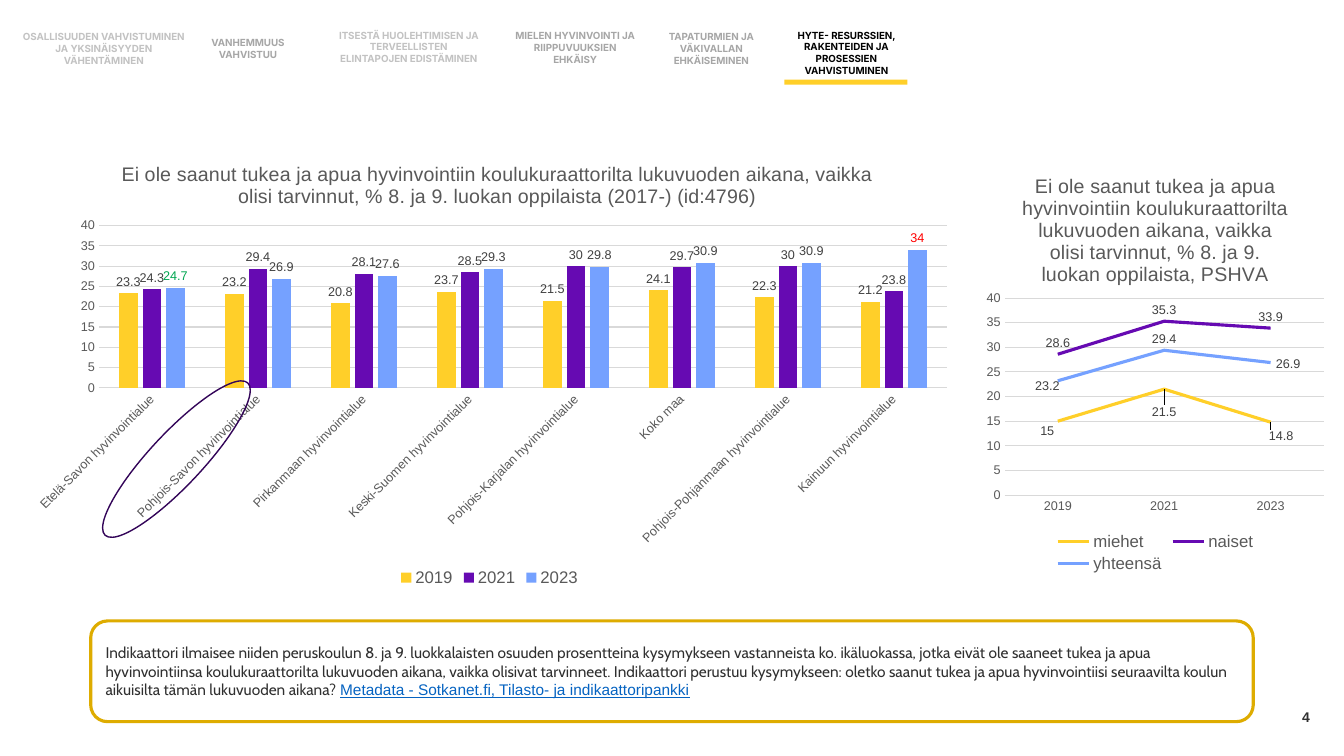
"""Build the slide on school social worker support: two charts, a section bar and an indicator note."""
import dataclasses

import pptx
import pptx.chart.data
import pptx.dml.color
import pptx.enum.chart
import pptx.enum.shapes
import pptx.enum.text
import pptx.oxml
import pptx.oxml.ns
import pptx.util


@dataclasses.dataclass(frozen=True)
class Theme:
    yellow: str = "FFCF29"
    purple: str = "660AB2"
    blue: str = "75A1FF"
    gold: str = "DEAC00"
    outline: str = "330559"
    black: str = "000000"
    pale: str = "C2C2C2"
    muted: str = "A6A6A6"
    ink: str = "303030"
    number: str = "313131"
    link: str = "0563C1"
    axis: str = "595959"
    grid: str = "D9D9D9"
    label: str = "404040"
    best: str = "00A651"
    worst: str = "FF0000"
    font: str = "Arial"
    tab_font: str = "Inter"
    note_font: str = "Cabin"
    tab_size: int = 7
    label_size: int = 9
    number_size: int = 10
    note_size: int = 11
    legend_size: int = 12
    title_size: int = 14


T = Theme()
WIDTH, HEIGHT = 13.33, 7.5
SERIES_COLORS = [T.yellow, T.purple, T.blue]
SHAPES = pptx.enum.shapes.MSO_SHAPE
ALIGN = pptx.enum.text.PP_ALIGN
KINDS = pptx.enum.chart.XL_CHART_TYPE
LABELS = pptx.enum.chart.XL_LABEL_POSITION

# Boxes are left, top, width, height in percent of the slide.
TABS = [
    (["OSALLISUUDEN VAHVISTUMINEN JA YKSINÄISYYDEN VÄHENTÄMINEN"], T.pale, (1.65, 4.8, 12.15, 3.2)),
    (["VANHEMMUUS VAHVISTUU"], T.muted, (13.88, 5.6, 9.15, 1.6)),
    (["ITSESTÄ HUOLEHTIMISEN JA TERVEELLISTEN ELINTAPOJEN EDISTÄMINEN"], T.pale, (25.13, 3.87, 10.58, 4.67)),
    (["MIELEN HYVINVOINTI JA RIIPPUVUUKSIEN EHKÄISY"], T.muted, (38.03, 4.67, 9.53, 3.2)),
    (["TAPATURMIEN JA VÄKIVALLAN EHKÄISEMINEN"], T.muted, (48.16, 4.8, 9.53, 3.2)),
    (["HYTE- RESURSSIEN, RAKENTEIDEN JA PROSESSIEN", "VAHVISTUMINEN"], T.black, (57.69, 4.67, 10.58, 4.67)),
]
TAB_MARK = (58.36, 10.53, 9.15, 0.67)
PAGE_NUMBER = ("4", (74.94, 92.13, 22.51, 5.33))
NOTE_BOX = (6.75, 82.13, 86.5, 13.33)
NOTE = (
    "Indikaattori ilmaisee niiden peruskoulun 8. ja 9. luokkalaisten osuuden prosentteina kysymykseen "
    "vastanneista ko. ikäluokassa, jotka eivät ole saaneet tukea ja apua hyvinvointiinsa koulukuraattorilta "
    "lukuvuoden aikana, vaikka olisivat tarvinneet. Indikaattori perustuu kysymykseen: oletko saanut tukea ja "
    "apua hyvinvointiisi seuraavilta koulun aikuisilta tämän lukuvuoden aikana? "
)
NOTE_LINK = "Metadata - Sotkanet.fi, Tilasto- ja indikaattoripankki"
HIGHLIGHT = (11.18, 46.93, 3.9, 27.6)

TITLE_START = (
    "Ei ole saanut tukea ja apua hyvinvointiin koulukuraattorilta lukuvuoden aikana, "
    "vaikka olisi tarvinnut, % 8. ja 9. luokan oppilaista"
)
REGIONS = {
    "kind": KINDS.COLUMN_CLUSTERED,
    "box": (0.98, 18.53, 70.89, 59.6),
    "title": TITLE_START + " (2017-) (id:4796)",
    "title_at": (0.11, 0.04),
    "plot": (0.09, 0.19, 0.89, 0.36),
    "categories": [
        "Etelä-Savon hyvinvointialue", "Pohjois-Savon hyvinvointialue", "Pirkanmaan hyvinvointialue",
        "Keski-Suomen hyvinvointialue", "Pohjois-Karjalan hyvinvointialue", "Koko maa",
        "Pohjois-Pohjanmaan hyvinvointialue", "Kainuun hyvinvointialue",
    ],
    "series": {
        "2019": [23.3, 23.2, 20.8, 23.7, 21.5, 24.1, 22.3, 21.2],
        "2021": [24.3, 29.4, 28.1, 28.5, 30, 29.7, 30, 23.8],
        "2023": [24.7, 26.9, 27.6, 29.3, 29.8, 30.9, 30.9, 34],
    },
    "label_position": LABELS.OUTSIDE_END,
    "point_labels": {("2023", 0): (T.best, None), ("2023", 7): (T.worst, None)},
}
GENDERS = {
    "kind": KINDS.LINE,
    "box": (72.92, 19.6, 26.11, 56.67),
    "title": TITLE_START + ", PSHVA",
    "title_at": (0.11, 0.05),
    "plot": (0.07, 0.35, 0.91, 0.46),
    "categories": ["2019", "2021", "2023"],
    "series": {"miehet": [15, 21.5, 14.8], "naiset": [28.6, 35.3, 33.9], "yhteensä": [23.2, 29.4, 26.9]},
    "label_position": LABELS.ABOVE,
    "point_labels": {
        ("miehet", 0): (T.label, (-0.03, 0.05)),
        ("miehet", 1): (T.label, (0, 0.08)),
        ("miehet", 2): (T.label, (0.03, 0.06)),
        ("yhteensä", 0): (T.label, (-0.03, 0.04)),
        ("yhteensä", 2): (T.label, (0.05, 0.03)),
    },
}


def place(box):
    sides = (WIDTH, HEIGHT, WIDTH, HEIGHT)
    return [pptx.util.Inches(share * side / 100) for share, side in zip(box, sides)]


def rgb(color):
    return pptx.dml.color.RGBColor.from_string(color)


def style(font, size, color, name=T.font, bold=False):
    font.size, font.name, font.bold = pptx.util.Pt(size), name, bold
    font.color.rgb = rgb(color)


def add_run(p, text, *look, **options):
    r = p.add_run()
    r.text = text
    style(r.font, *look, **options)
    return r


def add_text(s, lines, box, align, *look):
    tf = s.shapes.add_textbox(*place(box)).text_frame
    tf.word_wrap = True
    tf.vertical_anchor = pptx.enum.text.MSO_ANCHOR.MIDDLE
    tf.margin_left = tf.margin_right = tf.margin_top = tf.margin_bottom = 0
    for i, line in enumerate(lines):
        p = tf.add_paragraph() if i else tf.paragraphs[0]
        p.alignment = align
        add_run(p, line, *look, bold=True)


def add_shape(s, kind, box, fill=None, line=None, width=1):
    sp = s.shapes.add_shape(kind, *place(box))
    sp.shadow.inherit = False
    if fill:
        sp.fill.solid()
        sp.fill.fore_color.rgb = rgb(fill)
    else:
        sp.fill.background()
    if line:
        sp.line.color.rgb = rgb(line)
        sp.line.width = pptx.util.Pt(width)
    else:
        sp.line.fill.background()
    return sp


def set_layout(parent, index, position, target=None, absolute=True):
    for old in parent.findall(pptx.oxml.ns.qn("c:layout")):
        parent.remove(old)
    parts = [f'<c:layoutTarget val="{target}"/>'] if target else []
    if absolute:
        parts += [f'<c:{axis}Mode val="edge"/>' for axis in "xy"]
    parts += [f'<c:{side} val="{value}"/>' for side, value in zip("xywh", position)]
    parent.insert(index, pptx.oxml.parse_xml(
        f'<c:layout {pptx.oxml.ns.nsdecls("c")}><c:manualLayout>{"".join(parts)}</c:manualLayout></c:layout>'))


def format_axes(chart):
    cat, val = chart.category_axis, chart.value_axis
    for axis in (cat, val):
        axis.major_tick_mark = axis.minor_tick_mark = pptx.enum.chart.XL_TICK_MARK.NONE
        style(axis.tick_labels.font, T.label_size, T.axis)
    val.minimum_scale, val.maximum_scale, val.major_unit = 0, 40, 5
    val.format.line.fill.background()
    for line in (cat.format.line, val.major_gridlines.format.line):
        line.color.rgb = rgb(T.grid)
        line.width = pptx.util.Pt(0.75)


def add_chart(s, content):
    data = pptx.chart.data.CategoryChartData()
    data.categories = content["categories"]
    for name, values in content["series"].items():
        data.add_series(name, values)
    chart = s.shapes.add_chart(content["kind"], *place(content["box"]), data).chart
    style(chart.font, T.number_size, T.black)
    add_run(chart.chart_title.text_frame.paragraphs[0], content["title"], T.title_size, T.axis)
    chart.chart_title.include_in_layout = False
    set_layout(chart._chartSpace.chart.find(pptx.oxml.ns.qn("c:title")), 1, content["title_at"])
    set_layout(chart._chartSpace.chart.plotArea, 0, content["plot"], "inner")
    chart.has_legend = True
    chart.legend.position = pptx.enum.chart.XL_LEGEND_POSITION.BOTTOM
    chart.legend.include_in_layout = False
    style(chart.legend.font, T.legend_size, T.axis)
    format_axes(chart)
    plot = chart.plots[0]
    plot.vary_by_categories = False
    for series, color in zip(plot.series, SERIES_COLORS):
        if content["kind"] == KINDS.LINE:
            series.smooth = False
            series.marker.style = pptx.enum.chart.XL_MARKER_STYLE.NONE
            series.format.line.color.rgb = rgb(color)
            series.format.line.width = pptx.util.Pt(2.25)
        else:
            series.format.fill.solid()
            series.format.fill.fore_color.rgb = rgb(color)
        series.data_labels.show_value = True
        series.data_labels.position = content["label_position"]
        style(series.data_labels.font, T.label_size, T.label)
        for (name, i), (label_color, offset) in content["point_labels"].items():
            if name == series.name:
                label = series.points[i].data_label
                style(label.font, T.label_size, label_color)
                label.position = content["label_position"]
                if offset:
                    set_layout(label._dLbl, 1, offset, absolute=False)
    return chart


def main():
    prs = pptx.Presentation()
    prs.slide_width, prs.slide_height = pptx.util.Inches(WIDTH), pptx.util.Inches(HEIGHT)
    s = prs.slides.add_slide(prs.slide_layouts[6])
    number, number_box = PAGE_NUMBER
    add_text(s, [number], number_box, ALIGN.RIGHT, T.number_size, T.number)
    for lines, color, box in TABS:
        add_text(s, lines, box, ALIGN.CENTER, T.tab_size, color, T.tab_font)
    add_shape(s, SHAPES.RECTANGLE, TAB_MARK, fill=T.yellow)
    tf = add_shape(s, SHAPES.ROUNDED_RECTANGLE, NOTE_BOX, line=T.gold, width=2.25).text_frame
    tf.word_wrap = True
    p = tf.paragraphs[0]
    p.alignment = ALIGN.LEFT
    add_run(p, NOTE, T.note_size, T.ink, T.note_font)
    add_run(p, NOTE_LINK, T.note_size, T.link).font.underline = True
    columns = add_chart(s, REGIONS)
    columns.plots[0].gap_width, columns.plots[0].overlap = 219, -27
    columns.category_axis.tick_labels.font
    columns.category_axis._element.find(".//" + pptx.oxml.ns.qn("a:bodyPr")).set("rot", "-2700000")
    add_chart(s, GENDERS)
    add_shape(s, SHAPES.OVAL, HIGHLIGHT, line=T.outline).rotation = 43.1
    prs.save("out.pptx")


if __name__ == "__main__":
    main()
